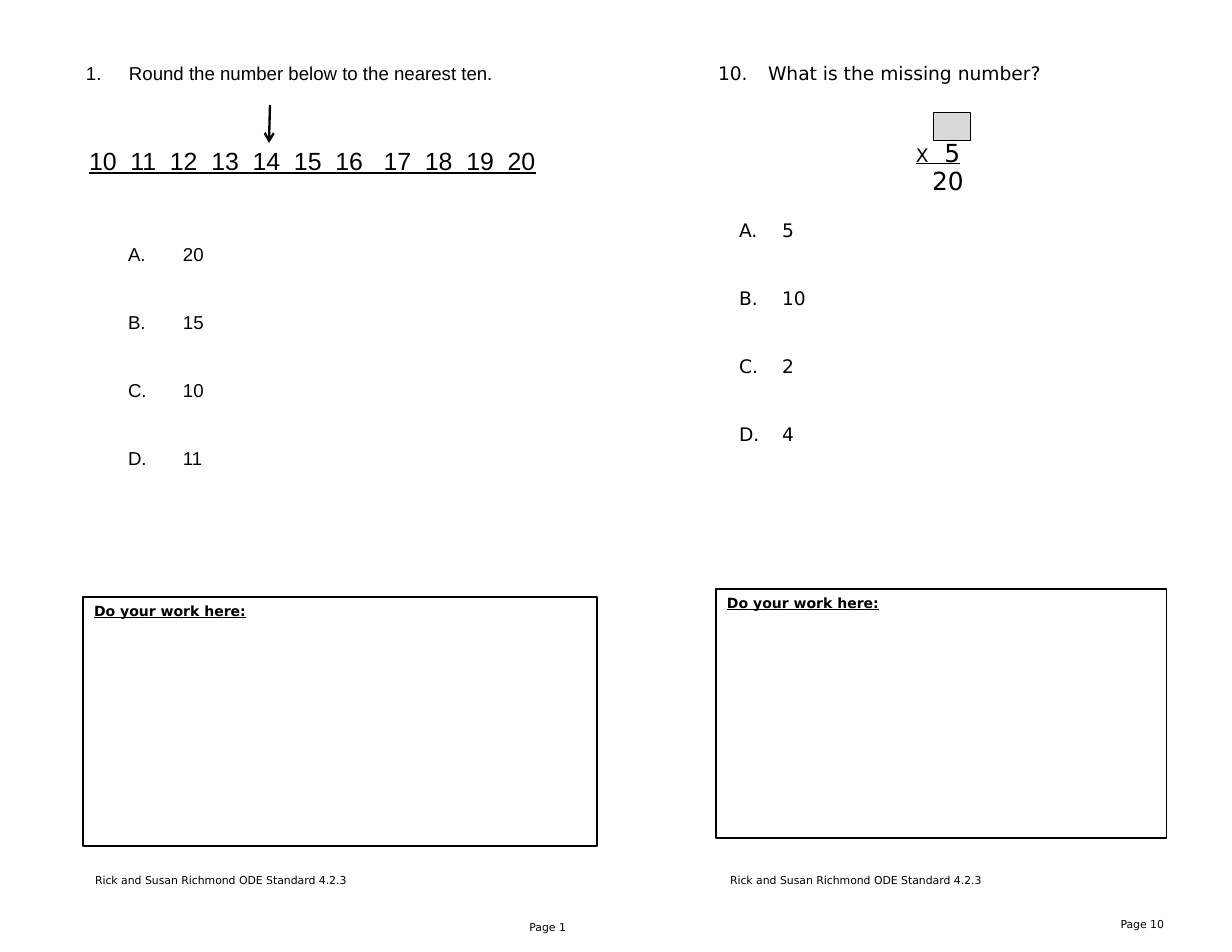
"""Build a two-up maths worksheet slide with two multiple-choice questions."""
from lxml import etree
from pptx import Presentation
from pptx.dml.color import RGBColor
from pptx.enum.shapes import MSO_CONNECTOR, MSO_SHAPE
from pptx.enum.text import MSO_ANCHOR, PP_ALIGN
from pptx.oxml.ns import qn
from pptx.util import Pt

SCALE = 914400 / 112
BLACK = RGBColor(0, 0, 0)
GRAY = RGBColor(0xD9, 0xD9, 0xD9)
RECTANGLE = MSO_SHAPE.RECTANGLE
STRAIGHT = MSO_CONNECTOR.STRAIGHT
LEFT, CENTER, RIGHT = PP_ALIGN.LEFT, PP_ALIGN.CENTER, PP_ALIGN.RIGHT
TOP = MSO_ANCHOR.TOP
SANS = "DejaVu Sans"
ARIAL = "Arial"


def px(*lengths):
    return [round(length * SCALE) for length in lengths]


def add_span(para, text, size, font=SANS, underline=False, bold=False):
    span = para.add_run()
    span.text = text
    span.font.size = Pt(size)
    span.font.name = font
    span.font.color.rgb = BLACK
    if underline:
        span.font.underline = True
    if bold:
        span.font.bold = True


deck = Presentation()
deck.slide_width, deck.slide_height = px(1232, 952)
page = deck.slides.add_slide(deck.slide_layouts[6])
shapes = page.shapes

for left, top, width in ((716, 589, 451), (83, 597, 514)):
    work_area = shapes.add_shape(RECTANGLE, *px(left, top, width, 249))
    work_area.shadow.inherit = False
    work_area.fill.background()
    work_area.line.color.rgb = BLACK
    work_area.line.width = Pt(0.75)
    work_area.text_frame.word_wrap = True
    work_area.text_frame.vertical_anchor = TOP
    para = work_area.text_frame.paragraphs[0]
    para.alignment = LEFT
    add_span(para, "Do your work here:", 9, underline=True, bold=True)

group = shapes.add_group_shape()
credit = "Rick and Susan Richmond ODE Standard 4.2.3"
number_line = "10  11  12  13  14  15  16   17  18  19  20"
labels = (
    (shapes, (485, 915, 92, 34), RIGHT, [("Page 1", 7, SANS, False)]),
    (shapes, (1083, 912, 92, 34), RIGHT, [("Page 10", 7, SANS, False)]),
    (shapes, (84, 868, 299, 25), LEFT, [(credit, 7, SANS, False)]),
    (shapes, (719, 868, 299, 25), LEFT, [(credit, 7, SANS, False)]),
    (shapes, (37, 140, 551, 41), CENTER, [(number_line, 16, ARIAL, True)]),
    (group.shapes, (905, 132, 121, 41), LEFT,
     [("X", 12, SANS, True), ("  5", 16, SANS, True)]),
    (group.shapes, (921, 160, 75, 41), LEFT, [("20", 16, SANS, False)]),
)
for parent, place, alignment, spans in labels:
    box = parent.add_textbox(*px(*place))
    box.text_frame.word_wrap = True
    para = box.text_frame.paragraphs[0]
    para.alignment = alignment
    for text, size, font, underline in spans:
        add_span(para, text, size, font, underline)

blank = group.shapes.add_shape(RECTANGLE, *px(933, 112, 37, 28))
blank.shadow.inherit = False
blank.fill.solid()
blank.fill.fore_color.rgb = GRAY
blank.line.color.rgb = BLACK
blank.line.width = Pt(0.25)

questions = (
    ((75, 56, 495, 419), ARIAL, 1, "Round the number below to the nearest ten.",
     ("20", "15", "10", "11"), (43, 43), (97, 55), 102),
    ((700, 56, 411, 395), SANS, 10, "What is the missing number?",
     ("5", "10", "2", "4"), (57, 50), (71, 43), 86.5),
)
for place, font, number, question, answers, stem_indent, answer_indent, gap in questions:
    box = shapes.add_textbox(*px(*place))
    frame = box.text_frame
    frame.word_wrap = True
    for index, text in enumerate((question, *answers)):
        para = frame.add_paragraph() if index else frame.paragraphs[0]
        add_span(para, text, 12, font)
        if index:
            para.space_before = Pt(gap if index == 1 else 29.3)
        margin, hanging = px(*(answer_indent if index else stem_indent))
        properties = para._p.get_or_add_pPr()
        properties.set("marL", str(margin))
        properties.set("indent", str(-hanging))
        etree.SubElement(properties, qn("a:buFont"), typeface=font)
        bullet = etree.SubElement(properties, qn("a:buAutoNum"))
        bullet.set("type", "alphaUcPeriod" if index else "arabicPeriod")
        if not index and number > 1:
            bullet.set("startAt", str(number))

arrow = shapes.add_connector(STRAIGHT, *px(270, 105, 269, 143))
arrow.line.color.rgb = BLACK
arrow.line.width = Pt(1.5)
etree.SubElement(arrow.line._get_or_add_ln(), qn("a:tailEnd"), type="arrow")
etree.SubElement(arrow._element.spPr, qn("a:effectLst"))

deck.save("out.pptx")
